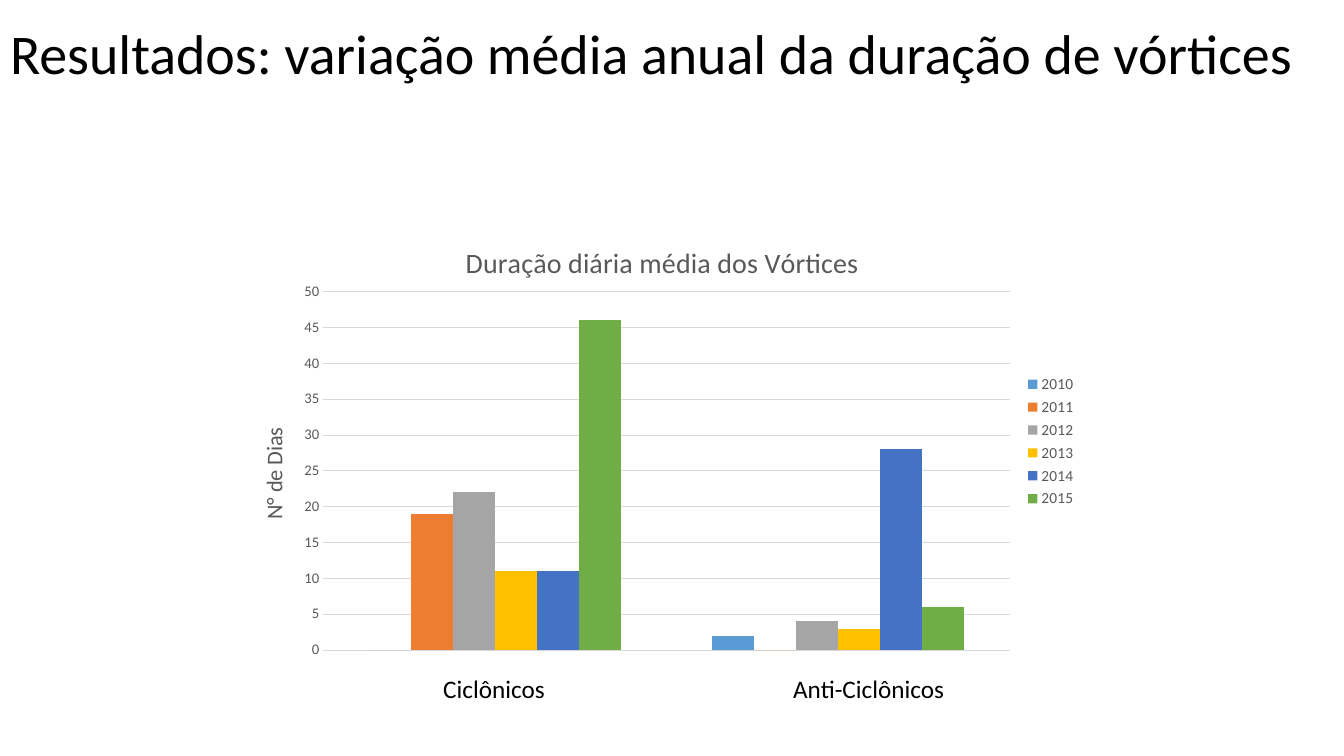
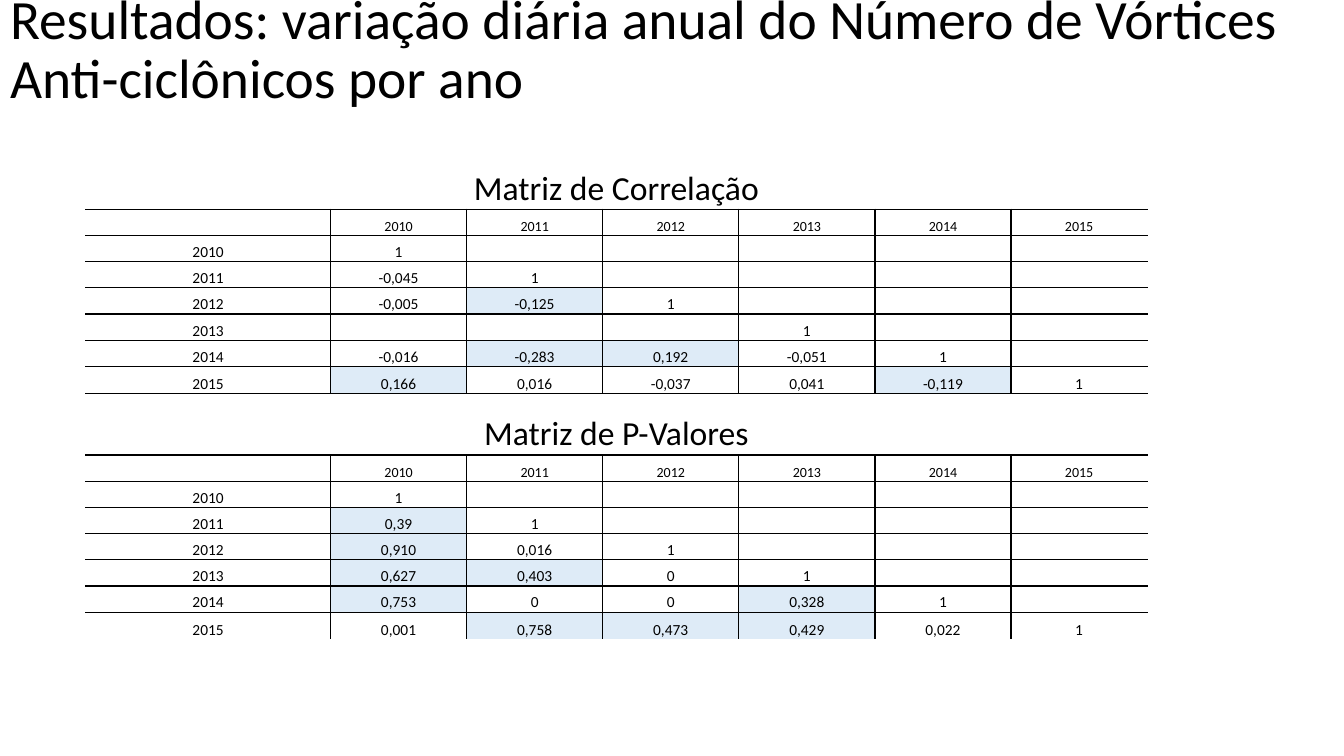
import pptx
import pptx.chart.data
import pptx.dml.color
import pptx.enum.chart
import pptx.enum.text
import pptx.oxml
import pptx.oxml.ns
import pptx.util

Cm, Pt = pptx.util.Cm, pptx.util.Pt
Align, Anchor = pptx.enum.text.PP_ALIGN, pptx.enum.text.MSO_ANCHOR

FONT = "Calibri"
COLORS = {"black": "000000", "white": "FFFFFF", "gray": "595959",
          "grid": "D9D9D9", "mark": "DEEBF7"}
YEAR_COLORS = {"2010": "5B9BD5", "2011": "ED7D31", "2012": "A5A5A5",
               "2013": "FFC000", "2014": "4472C4", "2015": "70AD47"}
YEARS = list(YEAR_COLORS)
SLIDE_W, SLIDE_H = 33.87, 19.05

DURATIONS = [(0, 2), (19, 0), (22, 4), (11, 3), (11, 28), (46, 6)]
CORRELATIONS = [
    ["1"],
    ["-0,045", "1"],
    ["-0,005", "-0,125", "1"],
    ["", "", "", "1"],
    ["-0,016", "-0,283", "0,192", "-0,051", "1"],
    ["0,166", "0,016", "-0,037", "0,041", "-0,119", "1"],
]
P_VALUES = [
    ["1"],
    ["0,39", "1"],
    ["0,910", "0,016", "1"],
    ["0,627", "0,403", "0", "1"],
    ["0,753", "0", "0", "0,328", "1"],
    ["0,001", "0,758", "0,473", "0,429", "0,022", "1"],
]


def rgb(name):
    return pptx.dml.color.RGBColor.from_string(COLORS.get(name, name))


def set_font(font, size, color="black"):
    font.name, font.size, font.bold = FONT, Pt(size), False
    font.color.rgb = rgb(color)


def put_text(tf, text, size, color="black", align=None, spacing=None):
    p = tf.paragraphs[0]
    if align is not None:
        p.alignment = align
    if spacing:
        p.line_spacing = spacing
    if text:
        r = p.add_run()
        r.text = text
        set_font(r.font, size, color)
    else:
        # An empty paragraph keeps its height through its end mark
        end = pptx.oxml.parse_xml(
            f'<a:endParaRPr {pptx.oxml.ns.nsdecls("a")} sz="{size * 100}"/>')
        p._p.append(end)


def add_slide(prs, title, height, size):
    s = prs.slides.add_slide(prs.slide_layouts[5])
    sp = s.shapes.title
    sp.left, sp.top, sp.width, sp.height = 0, 0, Cm(SLIDE_W), Cm(height)
    tf = sp.text_frame
    tf.word_wrap = True
    tf.auto_size = pptx.enum.text.MSO_AUTO_SIZE.NONE
    tf.vertical_anchor = Anchor.MIDDLE
    put_text(tf, title, size, align=Align.LEFT, spacing=0.9)
    return s


def add_label(s, text, x, y, w, h):
    tf = s.shapes.add_textbox(Cm(x), Cm(y), Cm(w), Cm(h)).text_frame
    tf.word_wrap = True
    put_text(tf, text, 18)


def place_part(element, index, **place):
    """Fix a chart part at fractions of the chart's size."""
    for old in element.findall(pptx.oxml.ns.qn("c:layout")):
        element.remove(old)
    inner = '<c:layoutTarget val="inner"/>' if "w" in place else ""
    modes = "".join(f'<c:{k}Mode val="edge"/>' for k in "xy")
    sizes = "".join(f'<c:{k} val="{v}"/>' for k, v in place.items())
    element.insert(index, pptx.oxml.parse_xml(
        f'<c:layout {pptx.oxml.ns.nsdecls("c")}><c:manualLayout>'
        f'{inner}{modes}{sizes}</c:manualLayout></c:layout>'))


def add_duration_chart(s, x, y, w, h):
    data = pptx.chart.data.CategoryChartData()
    data.categories = ["1", "2"]
    for year, values in zip(YEARS, DURATIONS):
        data.add_series(year, values)
    chart = s.shapes.add_chart(
        pptx.enum.chart.XL_CHART_TYPE.COLUMN_CLUSTERED,
        Cm(x), Cm(y), Cm(w), Cm(h), data).chart
    set_font(chart.font, 10)

    # Columns
    plot = chart.plots[0]
    plot.gap_width, plot.overlap, plot.vary_by_categories = 219, 0, False
    for series in plot.series:
        series.format.fill.solid()
        series.format.fill.fore_color.rgb = rgb(YEAR_COLORS[series.name])

    # Axes
    chart.category_axis.visible = False
    axis = chart.value_axis
    axis.minimum_scale, axis.maximum_scale, axis.major_unit = 0, 50, 5
    axis.major_tick_mark = pptx.enum.chart.XL_TICK_MARK.NONE
    axis.format.line.fill.background()
    set_font(axis.tick_labels.font, 10.5, "gray")
    grid = axis.major_gridlines.format.line
    grid.width, grid.color.rgb = Pt(0.75), rgb("grid")

    # Titles and legend
    put_text(axis.axis_title.text_frame, "N° de Dias", 16, color="gray")
    put_text(chart.chart_title.text_frame, "Duração diária média dos Vórtices",
             20, color="gray")
    chart.has_legend = True
    chart.legend.position = pptx.enum.chart.XL_LEGEND_POSITION.RIGHT
    chart.legend.include_in_layout = False
    set_font(chart.legend.font, 11, "gray")

    place_part(chart.chart_title._element, 1, x=0.27, y=0.05)
    place_part(axis.axis_title._element, 1, x=0.03, y=0.46)
    place_part(chart._chartSpace.chart.plotArea, 0,
               x=0.11, y=0.17, w=0.8, h=0.79)


def set_borders(cell, **sides):
    tc_pr = cell._tc.get_or_add_tcPr()
    for i, side in enumerate("LRTB"):
        tc_pr.insert(i, pptx.oxml.parse_xml(
            f'<a:ln{side} {pptx.oxml.ns.nsdecls("a")} w="{Pt(1)}"><a:solidFill>'
            f'<a:srgbClr val="{COLORS[sides[side]]}"/></a:solidFill></a:ln{side}>'))


def add_matrix(s, title, values, marked, x, y, w, last_line):
    """Triangular matrix by year; marked(value) tells which cells are tinted."""
    rows = [[title], [""] + YEARS]
    rows += [[year] + line for year, line in zip(YEARS, values)]
    n_rows, n_cols = len(rows), len(YEARS) + 1
    heights = [1.04] + [0.66] * (n_rows - 2) + [0.69]
    table = s.shapes.add_table(n_rows, n_cols, Cm(x), Cm(y), Cm(w),
                               Cm(sum(heights))).table
    table.first_row = table.horz_banding = False
    year_w = 3.43
    for c, col in enumerate(table.columns):
        col.width = Cm(year_w if c else w - year_w * len(YEARS))
    table.cell(0, 0).merge(table.cell(0, n_cols - 1))

    for r, row in enumerate(table.rows):
        row.height = Cm(heights[r])
        for c, cell in enumerate(row.cells):
            text = rows[r][c] if c < len(rows[r]) else ""
            tinted = (r > 1 and 0 < c < r - 1 and text != ""
                      and marked(float(text.replace(",", "."))))
            cell.margin_left = cell.margin_right = cell.margin_top = Cm(0.02)
            cell.margin_bottom = 0
            cell.vertical_anchor = Anchor.BOTTOM
            cell.fill.solid()
            cell.fill.fore_color.rgb = rgb("mark" if tinted else "white")
            set_borders(
                cell,
                L="white" if r == 0 or c == 0 else "black",
                R="white" if r == 0 or c == n_cols - 1 else "black",
                T="white" if r == 0 else "black",
                B=last_line if r == n_rows - 1 else "black")
            if not cell.is_spanned:
                put_text(cell.text_frame, text, {0: 24, 1: 10}.get(r, 11),
                         align=Align.CENTER)


def duration_slide(prs):
    s = add_slide(prs, "Resultados: variação média anual da duração de vórtices",
                  2.82, 40)
    add_duration_chart(s, 5.77, 5.41, 21.62, 11.43)
    for text, x in (("Ciclônicos", 10.92), ("Anti-Ciclônicos", 19.74)):
        add_label(s, text, x, 16.84, 6.02, 1.02)


def matrix_slide(prs):
    s = add_slide(prs, "Resultados: variação diária anual do Número de Vórtices "
                  "Anti-ciclônicos por ano", 2.57, 39.6)
    add_matrix(s, "Matriz de Correlação", CORRELATIONS, lambda v: abs(v) > 0.1,
               2.16, 4.22, 26.75, "black")
    add_matrix(s, "Matriz de P-Valores", P_VALUES, lambda v: v > 0.05,
               2.16, 10.41, 26.75, "white")


def main():
    prs = pptx.Presentation()
    prs.slide_width, prs.slide_height = Cm(SLIDE_W), Cm(SLIDE_H)
    duration_slide(prs)
    matrix_slide(prs)
    prs.save("out.pptx")


if __name__ == "__main__":
    main()
